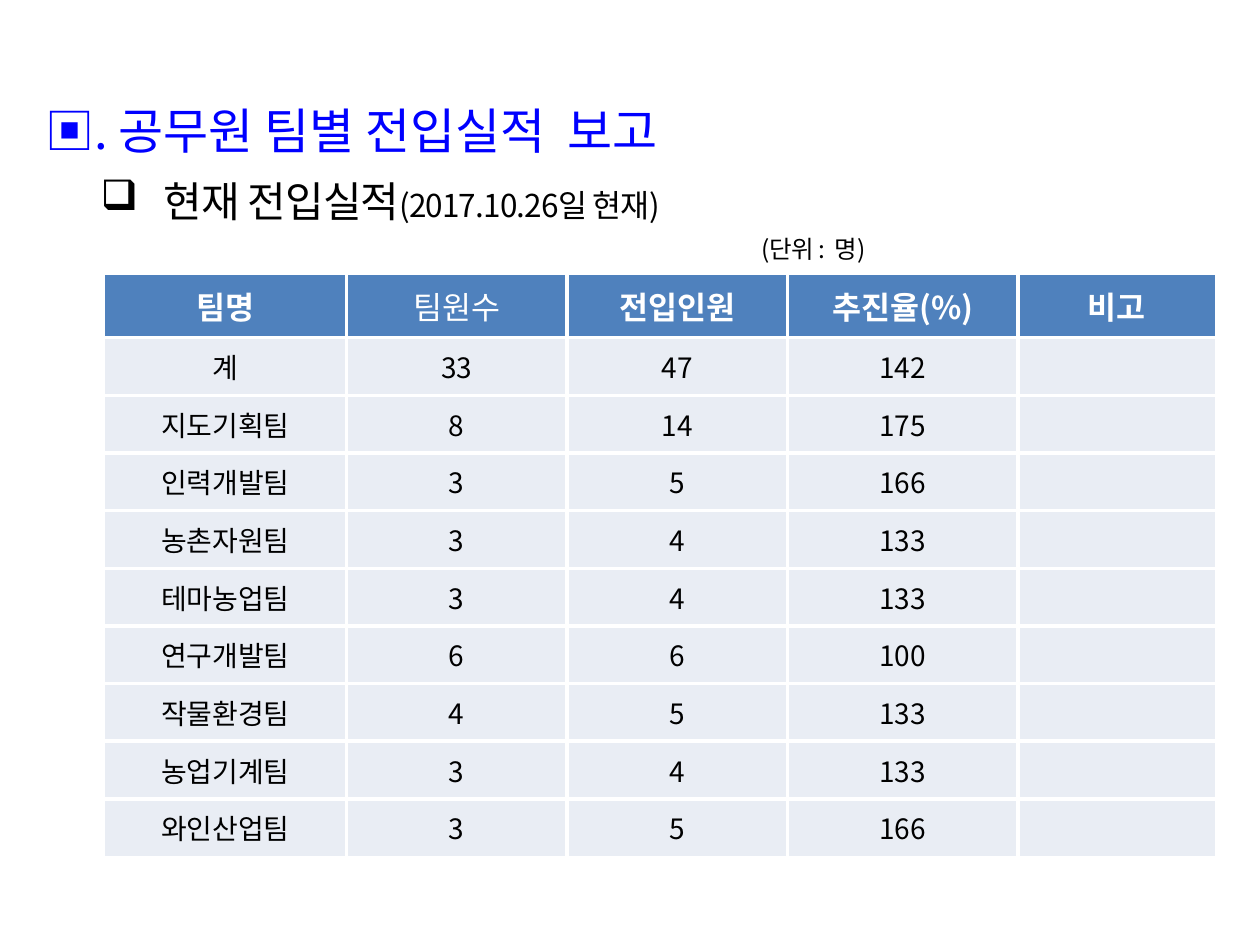
"""Build the staff transfer results slide: heading, subheading, unit note and team table."""
from lxml.etree import SubElement
from pptx import Presentation
from pptx.dml.color import RGBColor
from pptx.enum.text import MSO_ANCHOR as Anchor, MSO_AUTO_SIZE as AutoSize, PP_ALIGN as Align
from pptx.oxml.ns import qn
from pptx.util import Inches, Pt

HEADING = "▣. 공무원 팀별 전입실적  보고"
SUBHEADING = [("현재 전입실적", "subheading"), ("(2017.10.26일 현재)", "date")]
UNIT = "(단위 :  명)"
HEADERS = ["팀명", "팀원수", "전입인원", "추진율(%)", "비고"]
LIGHT_HEADER = "팀원수"
TEAMS = [
    ("계", 33, 47, 142, ""),
    ("지도기획팀", 8, 14, 175, ""),
    ("인력개발팀", 3, 5, 166, ""),
    ("농촌자원팀", 3, 4, 133, ""),
    ("테마농업팀", 3, 4, 133, ""),
    ("연구개발팀", 6, 6, 100, ""),
    ("작물환경팀", 4, 5, 133, ""),
    ("농업기계팀", 3, 4, 133, ""),
    ("와인산업팀", 3, 5, 166, ""),
]
COLUMN_WIDTHS = [1.92, 1.75, 1.75, 1.83, 1.57]
TABLE_LEFT, TABLE_TOP, TABLE_HEIGHT, HEADER_HEIGHT = 0.83, 2.18, 4.62, 0.5
HEADING_BOX = (0.26, 0.68, 9.5, 0.7)
SUBHEADING_BOX = (0.7, 1.29, 6, 0.6)
UNIT_BOX = (4.97, 1.77, 2, 0.4)
BULLET, BULLET_INDENT = "❑", 0.5

THEME = {
    "font": "Noto Sans CJK KR",
    "sizes": {"heading": 28, "subheading": 24, "date": 18, "unit": 14, "header": 18, "body": 16},
    "colors": {"heading": "0000FF", "text": "000000", "header_text": "FFFFFF",
               "header_fill": "4F81BD", "body_fill": "E9EDF4", "border": "FFFFFF"},
    "borders": {"outer": 1, "inner": 2.25},
    "tracking": -50,
}


def color(role):
    return RGBColor.from_string(THEME["colors"][role])


def add_run(paragraph, text, size, role, bold=False, tracking=None):
    run = paragraph.add_run()
    run.text = text
    formats = {"name": THEME["font"], "size": Pt(THEME["sizes"][size]), "bold": bold}
    for name, value in formats.items():
        setattr(run.font, name, value)
    run.font.color.rgb = color(role)
    properties = run.font._element
    SubElement(properties, qn("a:ea"), typeface=THEME["font"])
    if tracking:
        properties.set("spc", str(tracking))


def format_frame(shape, box, align):
    for name, value in zip(("left", "top", "width", "height"), box):
        setattr(shape, name, Inches(value))
    frame = shape.text_frame
    formats = {"word_wrap": True, "auto_size": AutoSize.NONE, "vertical_anchor": Anchor.MIDDLE}
    for name, value in formats.items():
        setattr(frame, name, value)
    paragraph = frame.paragraphs[0]
    paragraph.alignment = align
    return paragraph


def add_text_box(slide, box, align):
    return format_frame(slide.shapes.add_textbox(0, 0, 0, 0), box, align)


def add_bullet(paragraph):
    properties = paragraph._p.get_or_add_pPr()
    indent = Inches(BULLET_INDENT)
    properties.set("marL", str(indent))
    properties.set("indent", str(-indent))
    SubElement(properties, qn("a:buChar"), char=BULLET)


def add_borders(cell, outer_sides):
    properties = cell._tc.get_or_add_tcPr()
    for side, is_outer in outer_sides.items():
        width = Pt(THEME["borders"]["outer" if is_outer else "inner"])
        line = SubElement(properties, qn(f"a:ln{side}"), w=str(width))
        fill = SubElement(line, qn("a:solidFill"))
        SubElement(fill, qn("a:srgbClr"), val=THEME["colors"]["border"])


def add_team_table(slide):
    rows = [HEADERS, *TEAMS]
    last_row, last_column = len(rows) - 1, len(HEADERS) - 1
    body_height = (TABLE_HEIGHT - HEADER_HEIGHT) / len(TEAMS)
    bounds = (TABLE_LEFT, TABLE_TOP, sum(COLUMN_WIDTHS), TABLE_HEIGHT)
    table = slide.shapes.add_table(len(rows), len(HEADERS), *map(Inches, bounds)).table
    table.first_row = table.horz_banding = False
    for column, width in zip(table.columns, COLUMN_WIDTHS):
        column.width = Inches(width)
    for r, values in enumerate(rows):
        is_header = r == 0
        table.rows[r].height = Inches(HEADER_HEIGHT if is_header else body_height)
        for c, value in enumerate(values):
            cell = table.cell(r, c)
            add_borders(cell, {"L": c == 0, "R": c == last_column,
                               "T": r == 0, "B": r == last_row})
            cell.fill.solid()
            cell.fill.fore_color.rgb = color("header_fill" if is_header else "body_fill")
            cell.vertical_anchor = Anchor.MIDDLE
            paragraph = cell.text_frame.paragraphs[0]
            paragraph.alignment = Align.CENTER
            if value != "":
                add_run(paragraph, str(value), "header" if is_header else "body",
                        "header_text" if is_header else "text",
                        bold=is_header and value != LIGHT_HEADER)


def main():
    presentation = Presentation()
    presentation.slide_width, presentation.slide_height = Inches(10), Inches(7.5)
    slide = presentation.slides.add_slide(presentation.slide_layouts[5])
    heading = format_frame(slide.shapes.title, HEADING_BOX, Align.LEFT)
    add_run(heading, HEADING, "heading", "heading")
    subheading = add_text_box(slide, SUBHEADING_BOX, Align.LEFT)
    add_bullet(subheading)
    for text, size in SUBHEADING:
        add_run(subheading, text, size, "text", tracking=THEME["tracking"])
    unit = add_text_box(slide, UNIT_BOX, Align.RIGHT)
    add_run(unit, UNIT, "unit", "text", tracking=THEME["tracking"])
    add_team_table(slide)
    presentation.save("out.pptx")


if __name__ == "__main__":
    main()
